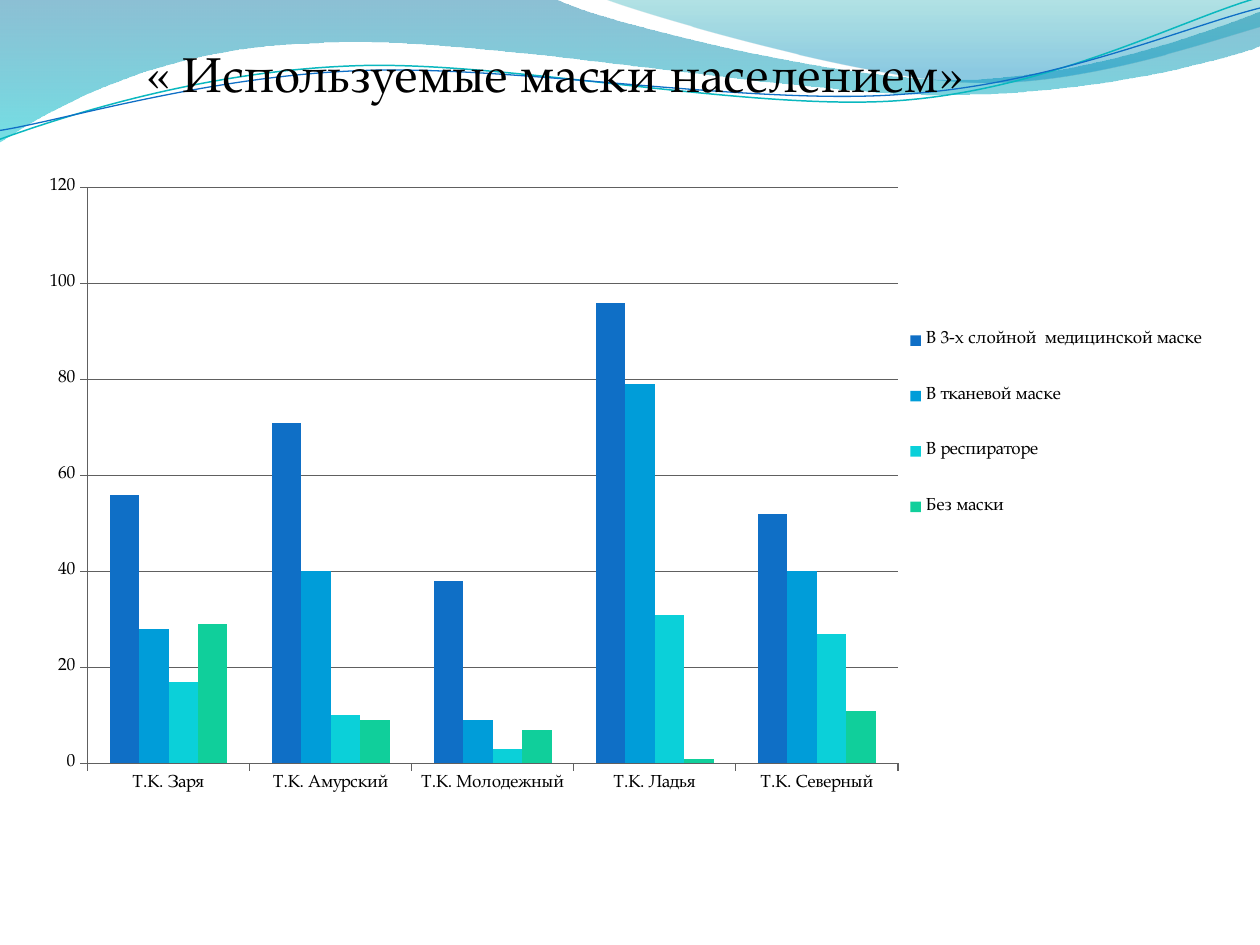
from dataclasses import dataclass
from math import cos, radians, sin

from lxml.etree import SubElement
from pptx import Presentation
from pptx.chart.data import CategoryChartData
from pptx.dml.color import RGBColor
from pptx.enum.chart import XL_CHART_TYPE, XL_LEGEND_POSITION, XL_TICK_MARK
from pptx.enum.text import MSO_ANCHOR, PP_ALIGN
from pptx.oxml import parse_xml
from pptx.oxml.ns import nsdecls, qn
from pptx.util import Cm, Pt

FONT = "TeX Gyre Pagella"
UNIT = Cm(0.0254)  # wave coordinates are hundredths of an inch
TILT = -2.7  # degrees, of the thin wave lines


@dataclass
class GradientStop:
    position: int
    color: str
    opacity: int


@dataclass
class Wave:
    """Each step holds one end point (line) or three points (Bezier curve)."""
    start: tuple[float, float]
    steps: list[tuple]

    def points(self) -> list[tuple[float, float]]:
        return [self.start, *(point for step in self.steps for point in step)]


@dataclass
class Band(Wave):
    stops: tuple[GradientStop, ...]


@dataclass
class WaveLine(Wave):
    center: tuple[float, float]
    color: str
    width: float


@dataclass
class MaskSeries:
    name: str
    values: tuple[int, ...]
    color: str


BANDS = [
    Band((0, 0), [
        ((440, -1),),
        ((476, 17), (664, 63), (758, 63)), ((853, 63), (958, 26), (1000, 9)),
        ((1001, 36),),
        ((983, 44), (870, 76), (746, 75)), ((622, 75), (382, 28), (257, 34)),
        ((129, 36), (46, 83), (-1, 113)), ((0, 0),),
    ], (GradientStop(0, "0074A1", 45), GradientStop(100, "00C6CF", 55))),
    Band((479, -1), [
        ((509, 11), (682, 62), (769, 65)), ((856, 69), (961, 32), (1000, 21)),
        ((1000, 0),), ((479, -1),),
    ], (GradientStop(0, "00A1A9", 30), GradientStop(80, "008BBF", 45))),
]
WAVE_LINES = [
    WaveLine((0, 111), [
        ((48, 93), (158, 57), (277, 52)), ((395, 47), (593, 89), (713, 80)),
        ((833, 71), (938, 15), (998, -2)),
    ], (499, 57.5), "0AB8BF", 0.85),
    WaveLine((0, 104), [
        ((47, 96), (164, 61), (283, 56)), ((403, 51), (597, 84), (717, 75)),
        ((836, 67), (941, 21), (1000, 6)),
    ], (499.5, 59), "0F6FC6", 0.75),
]

CATEGORIES = ["Т.К. Заря", "Т.К. Амурский", "Т.К. Молодежный", "Т.К. Ладья", "Т.К. Северный"]
SERIES = [
    MaskSeries("В 3-х слойной  медицинской маске", (56, 71, 38, 96, 52), "0F6FC6"),
    MaskSeries("В тканевой маске", (28, 40, 9, 79, 40), "009DD9"),
    MaskSeries("В респираторе", (17, 10, 3, 31, 27), "0BD0D9"),
    MaskSeries("Без маски", (29, 9, 7, 1, 11), "10CF9B"),
]


def rgb(color: str) -> RGBColor:
    return RGBColor.from_string(color)


def format_font(font, size: float) -> None:
    font.name = FONT
    font.size = Pt(size)
    font.color.rgb = rgb("000000")


def add_wave(shapes, wave: Wave, points: list[tuple[float, float]], close: bool):
    """Build an outline and join each three-point step into a Bezier curve."""
    builder = shapes.build_freeform(*points[0], scale=UNIT)
    builder.add_line_segments(points[1:], close=close)
    shape = builder.convert_to_shape()
    shape.shadow.inherit = False
    segments = iter(list(shape._element.iter(qn("a:lnTo"))))
    for step in wave.steps:
        parts = [next(segments) for _ in step]
        if len(parts) == 3:
            curve = parse_xml(f'<a:cubicBezTo {nsdecls("a")}/>')
            parts[0].addprevious(curve)
            for part in parts:
                curve.append(part[0])
                part.getparent().remove(part)
    return shape


def draw_band(shapes, band: Band) -> None:
    """Fill from top to bottom with translucent stops."""
    shape = add_wave(shapes, band, band.points(), close=True)
    shape.line.fill.background()
    stop_xml = "".join(
        f'<a:gs pos="{stop.position * 1000}"><a:srgbClr val="{stop.color}">'
        f'<a:alpha val="{stop.opacity * 1000}"/></a:srgbClr></a:gs>' for stop in band.stops)
    gradient = parse_xml(
        f'<a:gradFill {nsdecls("a")} rotWithShape="1"><a:gsLst>{stop_xml}</a:gsLst>'
        '<a:lin ang="5400000" scaled="0"/></a:gradFill>')
    shape._element.spPr.find(qn("a:custGeom")).addnext(gradient)


def draw_wave_line(shapes, line: WaveLine) -> None:
    """Lay the line out level, then tilt the shape."""
    (x, y), angle = line.center, radians(-TILT)
    level = [(x + (px - x) * cos(angle) - (py - y) * sin(angle),
              y + (px - x) * sin(angle) + (py - y) * cos(angle)) for px, py in line.points()]
    shape = add_wave(shapes, line, level, close=False)
    shape.rotation = TILT
    shape.fill.background()
    shape.line.color.rgb = rgb(line.color)
    shape.line.width = Pt(line.width)


def set_layout(layout, inner: bool, x: float, y: float, w: float, h: float) -> None:
    """Place a part of the chart by fractions of the chart size."""
    for child in list(layout):
        layout.remove(child)
    manual = SubElement(layout, qn("c:manualLayout"))
    settings = {"layoutTarget": "inner"} if inner else {}
    settings |= {"xMode": "edge", "yMode": "edge", "x": x, "y": y, "w": w, "h": h}
    for tag, value in settings.items():
        SubElement(manual, qn(f"c:{tag}")).set("val", str(value))


def draw_chart(slide) -> None:
    data = CategoryChartData()
    data.categories = CATEGORIES
    for series in SERIES:
        data.add_series(series.name, series.values)
    chart = slide.shapes.add_chart(
        XL_CHART_TYPE.COLUMN_CLUSTERED, Cm(0.89), Cm(2.73), Cm(23.61), Cm(15.2), data).chart
    format_font(chart.font, 10)
    chart.has_title = False

    # Columns
    plot = chart.plots[0]
    plot.gap_width = 150
    plot.overlap = 0
    plot.vary_by_categories = False
    for column, series in zip(plot.series, SERIES):
        column.format.fill.solid()
        column.format.fill.fore_color.rgb = rgb(series.color)

    # Axes and grid
    value_axis = chart.value_axis
    value_axis.has_major_gridlines = True
    for axis in (chart.category_axis, value_axis):
        axis.major_tick_mark = XL_TICK_MARK.OUTSIDE
    for part in (chart.category_axis, value_axis, value_axis.major_gridlines):
        part.format.line.color.rgb = rgb("606060")
        part.format.line.width = Pt(0.75)

    # Legend and plot area
    chart.has_legend = True
    legend = chart.legend
    legend.position = XL_LEGEND_POSITION.RIGHT
    legend.include_in_layout = False
    set_layout(legend._element.get_or_add_layout(), False, 0.734, 0.21, 0.26, 0.345)
    plot_area = chart._chartSpace.chart.plotArea
    layout = plot_area.find(qn("c:layout"))
    if layout is None:
        layout = parse_xml(f'<c:layout {nsdecls("c")}/>')
        plot_area.insert(0, layout)
    set_layout(layout, True, 0.037, 0.069, 0.692, 0.764)


def draw_title(slide) -> None:
    title = slide.shapes.title
    title.left, title.top, title.width, title.height = Cm(2.69), Cm(0.74), Cm(18.8), Cm(1.45)
    frame = title.text_frame
    frame.text = "« Используемые маски населением»"
    frame.vertical_anchor = MSO_ANCHOR.TOP
    paragraph = frame.paragraphs[0]
    paragraph.alignment = PP_ALIGN.LEFT
    format_font(paragraph.font, 28)
    slide.shapes._spTree.append(title._element)  # in front of the waves


def main() -> None:
    presentation = Presentation()
    presentation.slide_width, presentation.slide_height = Cm(25.4), Cm(19.05)
    slide = presentation.slides.add_slide(presentation.slide_layouts[5])
    for band in BANDS:
        draw_band(slide.shapes, band)
    line_group = slide.shapes.add_group_shape()
    for line in WAVE_LINES:
        draw_wave_line(line_group.shapes, line)
    draw_chart(slide)
    draw_title(slide)
    presentation.save("out.pptx")


if __name__ == "__main__":
    main()
